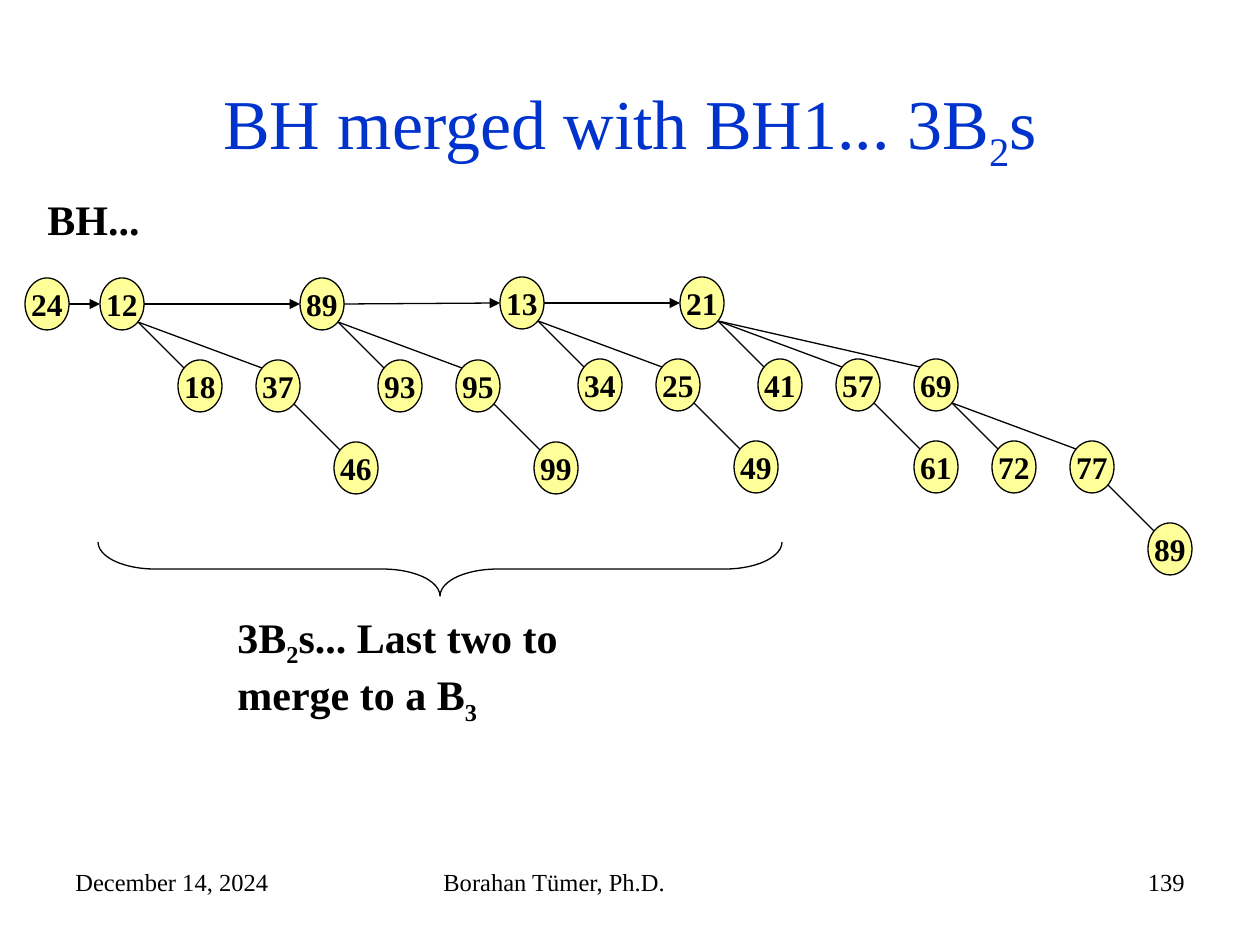
from dataclasses import dataclass

from lxml import etree
from pptx import Presentation
from pptx.dml.color import RGBColor
from pptx.enum.shapes import MSO_CONNECTOR, MSO_SHAPE
from pptx.enum.text import MSO_ANCHOR, MSO_AUTO_SIZE, PP_ALIGN
from pptx.oxml.ns import qn
from pptx.util import Emu, Pt

ELLIPSE, BRACE = MSO_SHAPE.OVAL, MSO_SHAPE.LEFT_BRACE
STRAIGHT = MSO_CONNECTOR.STRAIGHT
LEFT, CENTER, RIGHT = PP_ALIGN.LEFT, PP_ALIGN.CENTER, PP_ALIGN.RIGHT
MIDDLE = MSO_ANCHOR.MIDDLE

EMU_PER_PX = 914400 / 126
FONT = "Times New Roman"
COLORS = {"title": "0033CC", "text": "000000", "line": "000000", "node": "FFFF99"}

NODE_WIDTH, NODE_HEIGHT = 44, 52
COLUMN_STEP, LEVEL_STEP = 78, 82
EDGE_START = (38, 44)  # lower right of a node
EDGE_END = (6, 8)  # upper left of a node


@dataclass(frozen=True)
class Tree:
    key: int
    children: tuple["Tree", ...] = ()


@dataclass(frozen=True)
class Root:
    left: int
    top: int
    tree: Tree


@dataclass(frozen=True)
class Span:
    text: str
    subscript: bool = False


@dataclass(frozen=True)
class Label:
    left: int
    top: int
    width: int
    height: int
    spans: tuple[Span, ...]
    size: int
    bold: bool = False
    align: PP_ALIGN = LEFT


ROOTS = (
    Root(25, 278, Tree(24)),
    Root(100, 278, Tree(12, (Tree(18), Tree(37, (Tree(46),))))),
    Root(300, 278, Tree(89, (Tree(93), Tree(95, (Tree(99),))))),
    Root(500, 277, Tree(13, (Tree(34), Tree(25, (Tree(49),))))),
    Root(680, 277, Tree(21, (
        Tree(41),
        Tree(57, (Tree(61),)),
        Tree(69, (Tree(72), Tree(77, (Tree(89),)))),
    ))),
)

TITLE_SPANS = (Span("BH merged with BH1... 3B"), Span("2", True), Span("s"))

LABELS = (
    Label(35, 187, 132, 63, (Span("BH..."),), 24, bold=True),
    Label(225, 605, 434, 113, (
        Span("3B"), Span("2", True),
        Span("s... Last two to merge to a B"), Span("3", True),
    ), 24, bold=True),
    Label(63, 861, 294, 66, (Span("December 14, 2024"),), 14),
    Label(431, 861, 399, 66, (Span("Borahan Tümer, Ph.D."),), 14),
    Label(903, 861, 294, 66, (Span("139"),), 14, align=RIGHT),
)


def px(*lengths: float) -> list[Emu]:
    return [Emu(round(length * EMU_PER_PX)) for length in lengths]


def color(name: str) -> RGBColor:
    return RGBColor.from_string(COLORS[name])


def write_spans(frame, spans, size: int, align, bold=False, color_name="text") -> None:
    para = frame.paragraphs[0]
    para.alignment = align
    for span in spans:
        run = para.add_run()
        run.text = span.text
        run.font.name = FONT
        run.font.size = Pt(size)
        run.font.bold = bold
        run.font.color.rgb = color(color_name)
        if span.subscript:
            run._r.get_or_add_rPr().set("baseline", "-25000")


def style_line(line) -> None:
    line.color.rgb = color("line")
    line.width = Pt(0.75)


def add_title(page) -> None:
    title = page.shapes.title
    title.left, title.top, title.width, title.height = px(63, 38, 1134, 178)
    frame = title.text_frame
    frame.auto_size = MSO_AUTO_SIZE.NONE
    frame.vertical_anchor = MIDDLE
    write_spans(frame, TITLE_SPANS, 40, CENTER, color_name="title")


def add_label(page, label: Label) -> None:
    box = page.shapes.add_textbox(*px(label.left, label.top, label.width, label.height))
    box.text_frame.word_wrap = True
    write_spans(box.text_frame, label.spans, label.size, label.align, label.bold)


def add_line(page, start: tuple[int, int], end: tuple[int, int], arrow=False) -> None:
    connector = page.shapes.add_connector(STRAIGHT, *px(*start, *end))
    style_line(connector.line)
    if arrow:
        etree.SubElement(connector.line._get_or_add_ln(), qn("a:tailEnd"), type="triangle")
    etree.SubElement(connector._element.spPr, qn("a:effectLst"))


def add_node(page, key: int, left: int, top: int) -> None:
    node = page.shapes.add_shape(ELLIPSE, *px(left, top, NODE_WIDTH, NODE_HEIGHT))
    node.shadow.inherit = False
    node.fill.solid()
    node.fill.fore_color.rgb = color("node")
    style_line(node.line)
    node.text_frame.word_wrap = False
    node.text_frame.vertical_anchor = MIDDLE
    write_spans(node.text_frame, (Span(str(key)),), 18, CENTER, bold=True)


def add_tree(page, tree: Tree, left: int, top: int) -> None:
    """Draw a node and, one level lower, each child one column further right."""
    add_node(page, tree.key, left, top)
    child_top = top + LEVEL_STEP
    for column, child in enumerate(tree.children, start=1):
        child_left = left + column * COLUMN_STEP
        add_tree(page, child, child_left, child_top)
        add_line(
            page,
            (left + EDGE_START[0], top + EDGE_START[1]),
            (child_left + EDGE_END[0], child_top + EDGE_END[1]),
        )


def add_root_list(page) -> None:
    for root in ROOTS:
        add_tree(page, root.tree, root.left, root.top)
    for root, following in zip(ROOTS, ROOTS[1:]):
        add_line(
            page,
            (root.left + NODE_WIDTH, root.top + NODE_HEIGHT // 2),
            (following.left, following.top + NODE_HEIGHT // 2),
            arrow=True,
        )


def add_brace(page) -> None:
    brace = page.shapes.add_shape(BRACE, *px(413, 227, 54, 684))
    brace.rotation = 270
    brace.adjustments[0] = 1.06
    brace.shadow.inherit = False
    brace.fill.background()
    style_line(brace.line)


def main() -> None:
    deck = Presentation()
    deck.slide_width, deck.slide_height = px(1260, 945)
    page = deck.slides.add_slide(deck.slide_layouts[5])
    add_title(page)
    add_root_list(page)
    add_brace(page)
    for label in LABELS:
        add_label(page, label)
    deck.save("out.pptx")


if __name__ == "__main__":
    main()
